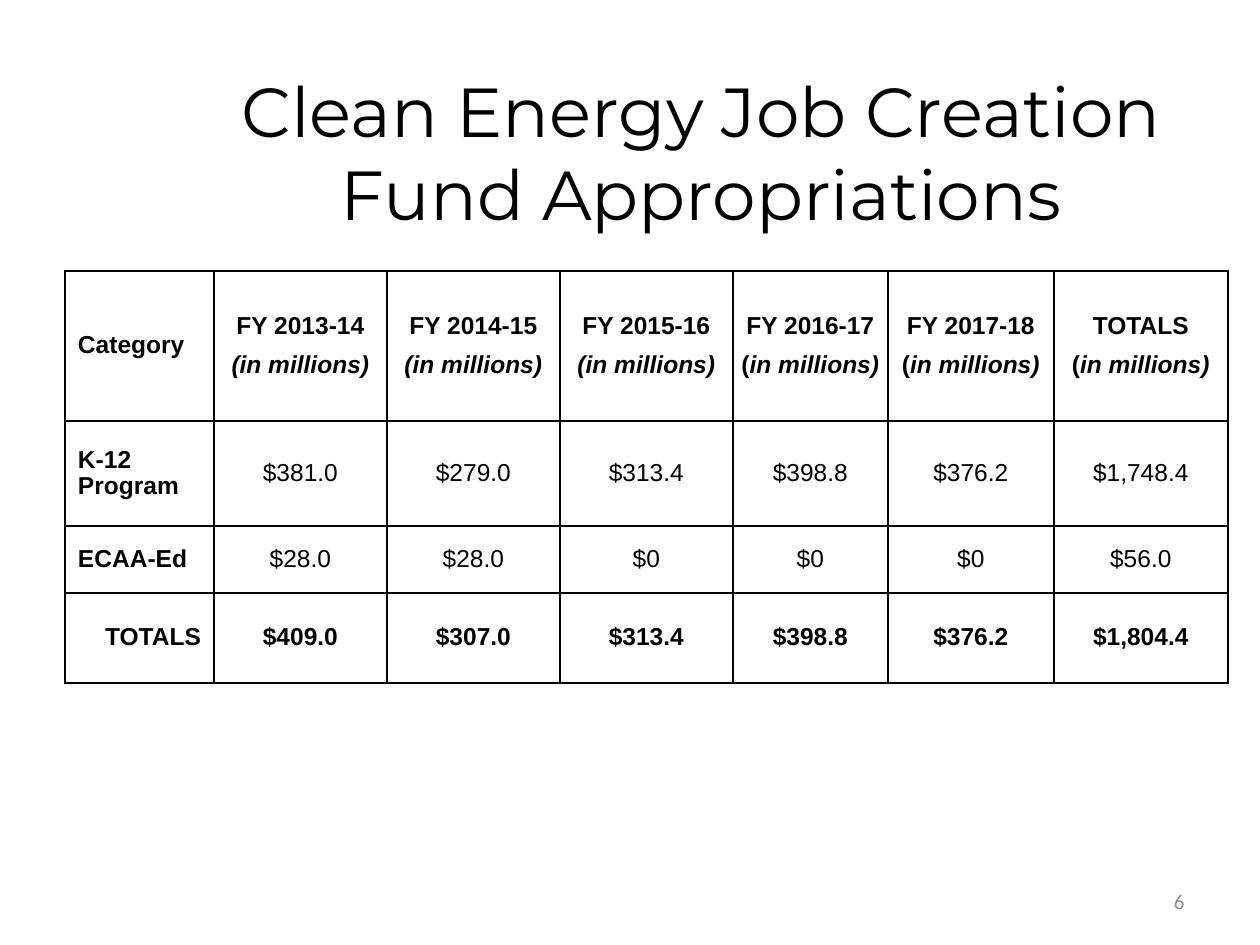
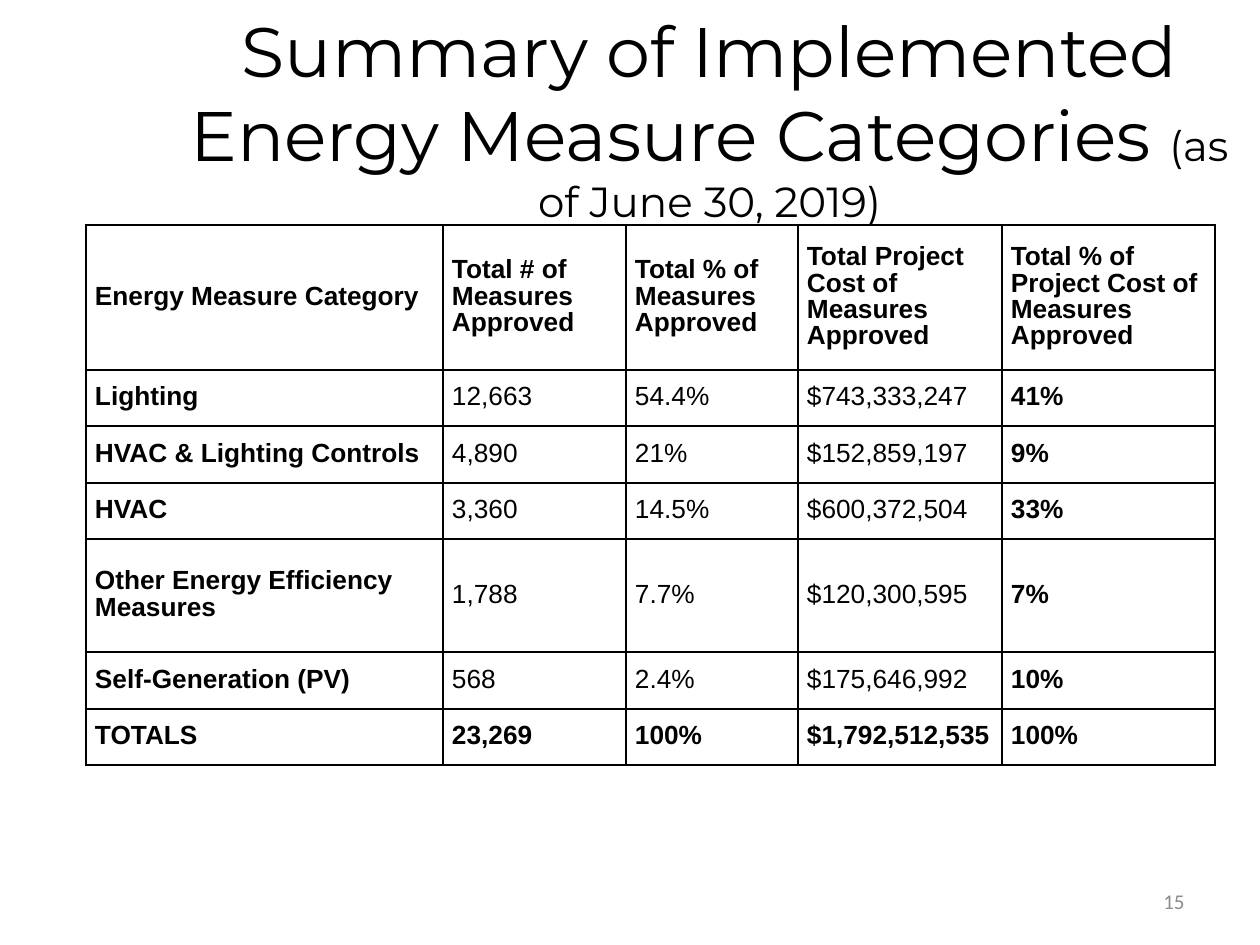
"""Builds two slides of clean energy funding tables."""
from pptx import Presentation
from pptx.dml.color import RGBColor as RGB
from pptx.enum.text import MSO_ANCHOR as ANCHOR, MSO_AUTO_SIZE as AUTO, PP_ALIGN as ALIGN
from pptx.oxml import parse_xml
from pptx.oxml.ns import nsdecls
from pptx.util import Pt

EMU_PER_PX = 914400 / 126
COLORS = {"text": "000000", "paper": "FFFFFF", "number": "8C8C8C"}
SIDES = ("margin_left", "margin_top", "margin_right", "margin_bottom")

FUND_UNIT = "*(in millions)*"
LATE_UNIT = "(*in millions)*"
FUND_ROWS = [
    ["Category"]
    + [f"FY {y}\n{FUND_UNIT}" for y in ("2013-14", "2014-15", "2015-16")]
    + [f"{y}\n{LATE_UNIT}" for y in ("FY 2016-17", "FY 2017-18", "TOTALS")],
    ["K-12 Program", "$381.0", "$279.0", "$313.4", "$398.8", "$376.2", "$1,748.4"],
    ["ECAA-Ed", "$28.0", "$28.0", "$0", "$0", "$0", "$56.0"],
    ["TOTALS", "$409.0", "$307.0", "$313.4", "$398.8", "$376.2", "$1,804.4"],
]
MEASURE_ROWS = [
    ["Energy Measure Category", "Total # of Measures Approved",
     "Total % of Measures Approved", "Total Project Cost of Measures Approved",
     "Total % of Project Cost of Measures Approved"],
    ["Lighting", "12,663", "54.4%", "$743,333,247", "41%"],
    ["HVAC & Lighting Controls", "4,890", "21%", "$152,859,197", "9%"],
    ["HVAC", "3,360", "14.5%", "$600,372,504", "33%"],
    ["Other Energy Efficiency Measures", "1,788", "7.7%", "$120,300,595", "7%"],
    ["Self-Generation (PV)", "568", "2.4%", "$175,646,992", "10%"],
    ["TOTALS", "23,269", "100%", "$1,792,512,535", "100%"],
]


def px(n):
    """Turn px into EMU."""
    return round(n * EMU_PER_PX)


def set_all(obj, values):
    """Set each named attribute of an object."""
    for name, value in values.items():
        setattr(obj, name, value)


def add_run(p, text, color="text", **font):
    """Add a formatted run to a paragraph."""
    r = p.add_run()
    r.text = text
    set_all(r.font, font)
    r.font.color.rgb = RGB.from_string(COLORS[color])


def add_title(s, box, runs):
    """Place the centred title, given as pairs of text and point size."""
    sp = s.shapes.title
    set_all(sp, dict(zip(("left", "top", "width", "height"), map(px, box))))
    set_all(sp.text_frame, {"auto_size": AUTO.NONE, "word_wrap": True,
                            "vertical_anchor": ANCHOR.MIDDLE})
    p = sp.text_frame.paragraphs[0]
    p.alignment = ALIGN.CENTER
    for text, size in runs:
        add_run(p, text, name="Montserrat", size=Pt(size))


def add_page_number(s, number):
    """Add the grey page number at the bottom right."""
    tf = s.shapes.add_textbox(px(903), px(876), px(294), px(50)).text_frame
    set_all(tf, {"word_wrap": True, "vertical_anchor": ANCHOR.MIDDLE})
    p = tf.paragraphs[0]
    p.alignment = ALIGN.RIGHT
    add_run(p, str(number), "number", name="Calibri", size=Pt(12))


def add_borders(cell):
    """Draw a line on all four sides of a cell."""
    tc_pr = cell._tc.get_or_add_tcPr()
    for side in "LRTB":
        tc_pr.append(parse_xml(
            f'<a:ln{side} {nsdecls("a")} w="{Pt(1.5)}"><a:solidFill>'
            f'<a:srgbClr val="{COLORS["text"]}"/></a:solidFill></a:ln{side}>'))


def fill_cell(cell, text, align, size, after, bold):
    """Write and format a cell; asterisks enclose italic text."""
    add_borders(cell)
    cell.fill.solid()
    cell.fill.fore_color.rgb = RGB.from_string(COLORS["paper"])
    cell.vertical_anchor = ANCHOR.MIDDLE
    tf = cell.text_frame
    for i, line in enumerate(text.split("\n")):
        p = tf.add_paragraph() if i else tf.paragraphs[0]
        set_all(p, {"alignment": align, "line_spacing": Pt(15), "space_after": Pt(after)})
        for j, part in enumerate(line.split("*")):
            if part:
                add_run(p, part, name="Arial", size=Pt(size), bold=bold, italic=j % 2 == 1)


def add_grid(s, left, top, widths, heights, rows, size, after, bold_cols, align_of, insets_of):
    """Add a ruled table with bold first and last rows."""
    table = s.shapes.add_table(len(rows), len(widths), px(left), px(top),
                               px(sum(widths)), px(sum(heights))).table
    set_all(table, {"first_row": False, "horz_banding": False})
    for col, width in zip(table.columns, widths):
        col.width = px(width)
    last = len(rows) - 1
    for i, (row, height) in enumerate(zip(rows, heights)):
        table.rows[i].height = px(height)
        for j, text in enumerate(row):
            cell = table.cell(i, j)
            set_all(cell, dict(zip(SIDES, map(px, insets_of(j)))))
            fill_cell(cell, text, align_of(i, j), size, after,
                      i in (0, last) or j in bold_cols)


def fund_align(i, j):
    """Centre the amounts and push the totals label right."""
    if j:
        return ALIGN.CENTER
    return ALIGN.RIGHT if i == len(FUND_ROWS) - 1 else ALIGN.LEFT


def fund_insets(j):
    """Give the two narrow year columns no insets."""
    return (0, 0, 0, 0) if j in (4, 5) else (13, 6, 13, 6)


def main():
    """Build and save both slides."""
    prs = Presentation()
    set_all(prs, {"slide_width": px(1260), "slide_height": px(945)})
    layout = prs.slide_layouts[5]

    s = prs.slides.add_slide(layout)
    add_title(s, (164, 107, 1074, 88),
              [("Clean Energy Job Creation Fund Appropriations", 39.6)])
    add_page_number(s, 6)
    add_grid(s, 65, 271, [149, 173, 173, 173, 155, 166, 174], [150, 105, 67, 90],
             FUND_ROWS, 14, 7, {0}, fund_align, fund_insets)

    s = prs.slides.add_slide(layout)
    add_title(s, (159, 38, 1101, 158),
              [("Summary of Implemented Energy Measure Categories ", 40),
               ("(as of June 30, 2019)", 24)])
    add_page_number(s, 15)
    add_grid(s, 86, 225, [357, 183, 172, 204, 213], [145, 56, 57, 56, 113, 57, 56],
             MEASURE_ROWS, 15, 2, {0, 4}, lambda i, j: ALIGN.LEFT, lambda j: (9, 0, 9, 0))

    prs.save("out.pptx")


if __name__ == "__main__":
    main()
